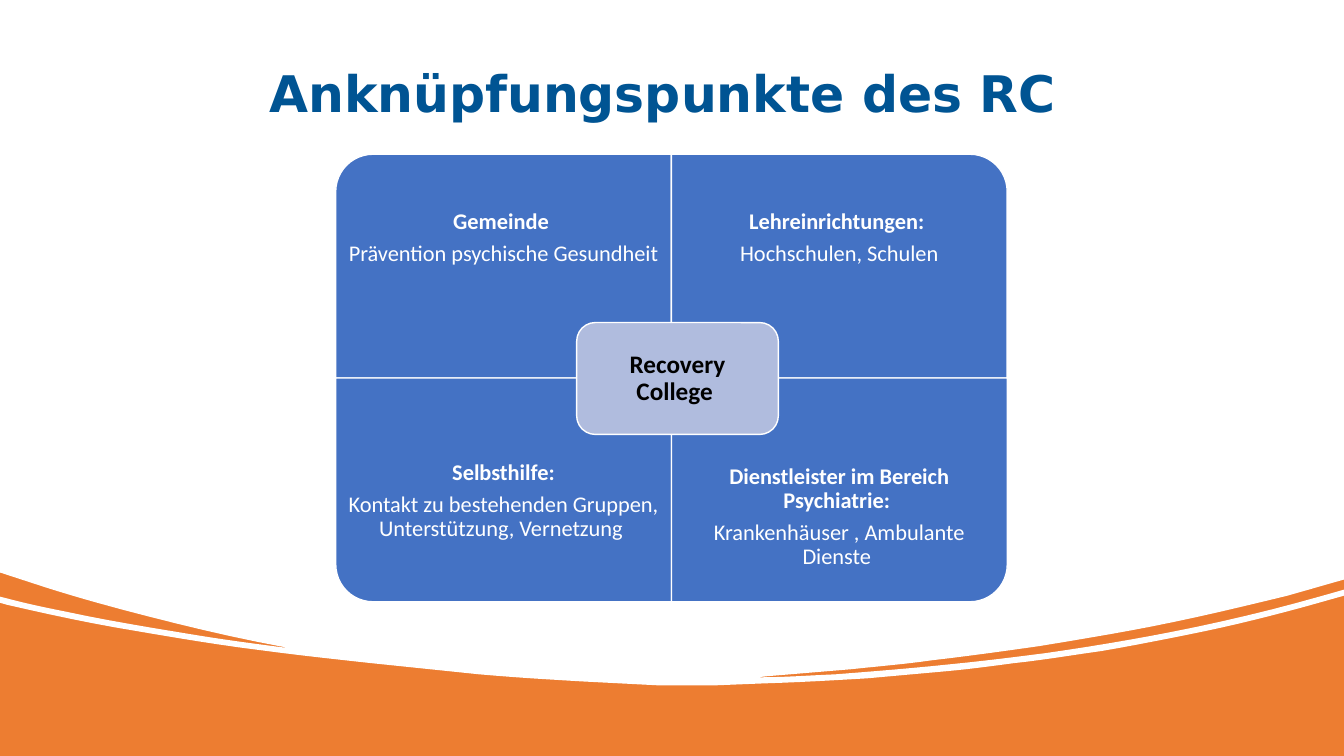
from pptx import Presentation
from pptx.dml.color import RGBColor
from pptx.enum.shapes import MSO_SHAPE
from pptx.enum.text import MSO_ANCHOR, PP_ALIGN
from pptx.util import Inches, Pt

SLIDE_WIDTH, SLIDE_HEIGHT = 13.33, 7.5
MATRIX_LEFT, MATRIX_TOP = 3.33, 1.53
QUADRANT_WIDTH, QUADRANT_HEIGHT = 3.33, 2.22
TEXT_HEIGHT = 1.67

# Outline of the white area: pairs are corners, sextets are Bézier curves.
WAVE = [
    (13.33, 0), (13.33, 5.75), (13.19, 5.79),
    (13.05, 5.83, 12.91, 5.87, 12.77, 5.91),
    (12.32, 6.02, 11.86, 6.13, 11.4, 6.22),
    (11.04, 6.29, 10.67, 6.35, 10.31, 6.41),
    (9.96, 6.46, 9.6, 6.51, 9.25, 6.55),
    (8.98, 6.59, 8.71, 6.61, 8.44, 6.64),
    (7.6, 6.71), (7.43, 6.73), (7.53, 6.72),
    (7.78, 6.72, 8.04, 6.7, 8.29, 6.69),
    (8.67, 6.66, 9.05, 6.63, 9.43, 6.59),
    (9.74, 6.56, 10.06, 6.52, 10.37, 6.48),
    (10.79, 6.42, 11.21, 6.35, 11.62, 6.27),
    (12.13, 6.17, 12.63, 6.05, 13.12, 5.91),
    (13.33, 5.85), (13.33, 5.91), (12.94, 6.02),
    (12.61, 6.11, 12.29, 6.19, 11.96, 6.26),
    (11.62, 6.33, 11.27, 6.4, 10.92, 6.46),
    (10.63, 6.5, 10.34, 6.55, 10.05, 6.58),
    (9.83, 6.61, 9.6, 6.64, 9.38, 6.66),
    (8.6, 6.73), (8.26, 6.75, 7.92, 6.77, 7.58, 6.78),
    (7.08, 6.8), (6.62, 6.8), (6.54, 6.8), (5.76, 6.76),
    (5.42, 6.74, 5.09, 6.72, 4.75, 6.69),
    (3.69, 6.58), (3.32, 6.54, 2.95, 6.5, 2.58, 6.45),
    (2.17, 6.4, 1.76, 6.33, 1.35, 6.26),
    (0.92, 6.19, 0.5, 6.1, 0.07, 6),
    (0, 5.98), (0, 5.92), (0.08, 5.94),
    (0.27, 5.99, 0.46, 6.03, 0.66, 6.07),
    (1.08, 6.16, 1.51, 6.23, 1.94, 6.3),
    (2.24, 6.35, 2.55, 6.39, 2.86, 6.43), (2.82, 6.42),
    (2.28, 6.32, 1.75, 6.19, 1.22, 6.05),
    (0.96, 5.98, 0.71, 5.91, 0.46, 5.83), (0, 5.68),
]

# Heading, detail, rotation, extra bottom inset; row by row.
QUADRANTS = [
    ("Gemeinde ", "Prävention psychische Gesundheit ", 270, 0),
    ("Lehreinrichtungen: ", "Hochschulen, Schulen", 0, 0),
    ("Selbsthilfe:",
     "Kontakt zu bestehenden Gruppen, Unterstützung, Vernetzung ", 180, 0.32),
    ("Dienstleister im Bereich Psychiatrie: ",
     "Krankenhäuser , Ambulante Dienste ", 90, 0),
]


def color(hex_value):
    return RGBColor.from_string(hex_value)


def flatten(start, outline, steps=6):
    """Return the outline's points with each curve cut into short lines."""
    points, current = [], start
    for piece in outline:
        if len(piece) == 2:
            points.append(piece)
        else:
            controls = [current, piece[:2], piece[2:4], piece[4:]]
            for step in range(1, steps + 1):
                t = step / steps
                weights = ((1 - t) ** 3, 3 * t * (1 - t) ** 2,
                           3 * t ** 2 * (1 - t), t ** 3)
                points.append(tuple(
                    sum(weight * control[axis]
                        for weight, control in zip(weights, controls))
                    for axis in (0, 1)))
        current = points[-1]
    return points


class SlideBuilder:
    orange, white, blue, lavender = "ED7D31", "FFFFFF", "4472C4", "B0BCDE"
    title_blue, black = "005493", "000000"
    body_font, title_font = "Calibri", "DejaVu Sans"

    def __init__(self, presentation):
        self.slide = presentation.slides.add_slide(presentation.slide_layouts[5])
        self.group = None

    def paint(self, shape, fill, line=None):
        shape.shadow.inherit = False
        shape.fill.solid()
        shape.fill.fore_color.rgb = color(fill)
        if line:
            shape.line.color.rgb = color(line)
            shape.line.width = Pt(1)
        else:
            shape.line.fill.background()

    def preset(self, kind, box, fill, line=None, rotation=0):
        shapes = (self.group or self.slide).shapes
        shape = shapes.add_shape(kind, *map(Inches, box))
        shape.rotation = rotation
        self.paint(shape, fill, line)
        return shape

    def backdrop(self):
        """Draw the orange ground and the white wave behind the title."""
        ground = self.preset(MSO_SHAPE.RECTANGLE,
                             (0, 0, SLIDE_WIDTH, SLIDE_HEIGHT), self.orange)
        builder = self.slide.shapes.build_freeform(0, 0)
        builder.add_line_segments(
            [(Inches(x), Inches(y)) for x, y in flatten((0, 0), WAVE)], close=True)
        wave = builder.convert_to_shape()
        self.paint(wave, self.white)
        for shape in (ground, wave):
            self.slide.shapes.title.element.addprevious(shape.element)

    def fill_text(self, shape, lines, inset, extra_bottom=0, spacing=0.9):
        """Fill a shape with centred lines of (text, font format values)."""
        frame = shape.text_frame
        frame.word_wrap = True
        frame.vertical_anchor = MSO_ANCHOR.MIDDLE
        for side in ("left", "right", "top", "bottom"):
            setattr(frame, f"margin_{side}", Inches(inset))
        frame.margin_bottom = Inches(inset + extra_bottom)
        for index, (text, font_format) in enumerate(lines):
            paragraph = frame.add_paragraph() if index else frame.paragraphs[0]
            paragraph.alignment = PP_ALIGN.CENTER
            paragraph.line_spacing = spacing
            paragraph.space_after = Pt(5.6 if index < len(lines) - 1 else 0)
            run = paragraph.add_run()
            run.text = text
            for name, value in font_format.items():
                if name == "color":
                    run.font.color.rgb = color(value)
                else:
                    setattr(run.font, name, value)

    def title(self, text):
        title = self.slide.shapes.title
        box = dict(left=0.37, top=0.48, width=12.58, height=1.02)
        for name, value in box.items():
            setattr(title, name, Inches(value))
        style = dict(name=self.title_font, size=Pt(36), bold=True,
                     color=self.title_blue)
        self.fill_text(title, [(text, style)], 0, spacing=Pt(32))

    def quadrant(self, index, heading, detail, rotation, extra_bottom):
        row, column = divmod(index, 2)
        left = MATRIX_LEFT + column * QUADRANT_WIDTH
        top = MATRIX_TOP + row * QUADRANT_HEIGHT
        width, height = QUADRANT_WIDTH, QUADRANT_HEIGHT
        shift = 0
        if rotation % 180:
            shift = (width - height) / 2
            width, height = height, width
        self.preset(MSO_SHAPE.ROUND_1_RECTANGLE,
                    (left + shift, top - shift, width, height),
                    self.blue, self.white, rotation)
        text_top = top + row * (QUADRANT_HEIGHT - TEXT_HEIGHT)
        text_box = self.group.shapes.add_textbox(
            *map(Inches, (left, text_top, QUADRANT_WIDTH, TEXT_HEIGHT)))
        style = dict(name=self.body_font, size=Pt(16), color=self.white)
        self.fill_text(text_box, [(heading, {**style, "bold": True}),
                                  (detail, {**style, "bold": False})],
                       0.12, extra_bottom)

    def matrix(self, center_text):
        self.group = self.slide.shapes.add_group_shape()
        for index, quadrant in enumerate(QUADRANTS):
            self.quadrant(index, *quadrant)
        center = self.preset(MSO_SHAPE.ROUNDED_RECTANGLE, (5.72, 3.2, 2, 1.11),
                             self.lavender, self.white)
        style = dict(name=self.body_font, size=Pt(18), bold=True, color=self.black)
        self.fill_text(center, [(center_text, style)], 0.07)


def main():
    presentation = Presentation()
    presentation.slide_width = Inches(SLIDE_WIDTH)
    presentation.slide_height = Inches(SLIDE_HEIGHT)
    builder = SlideBuilder(presentation)
    builder.backdrop()
    builder.title("Anknüpfungspunkte des RC ")
    builder.matrix("Recovery College ")
    presentation.save("out.pptx")


if __name__ == "__main__":
    main()
